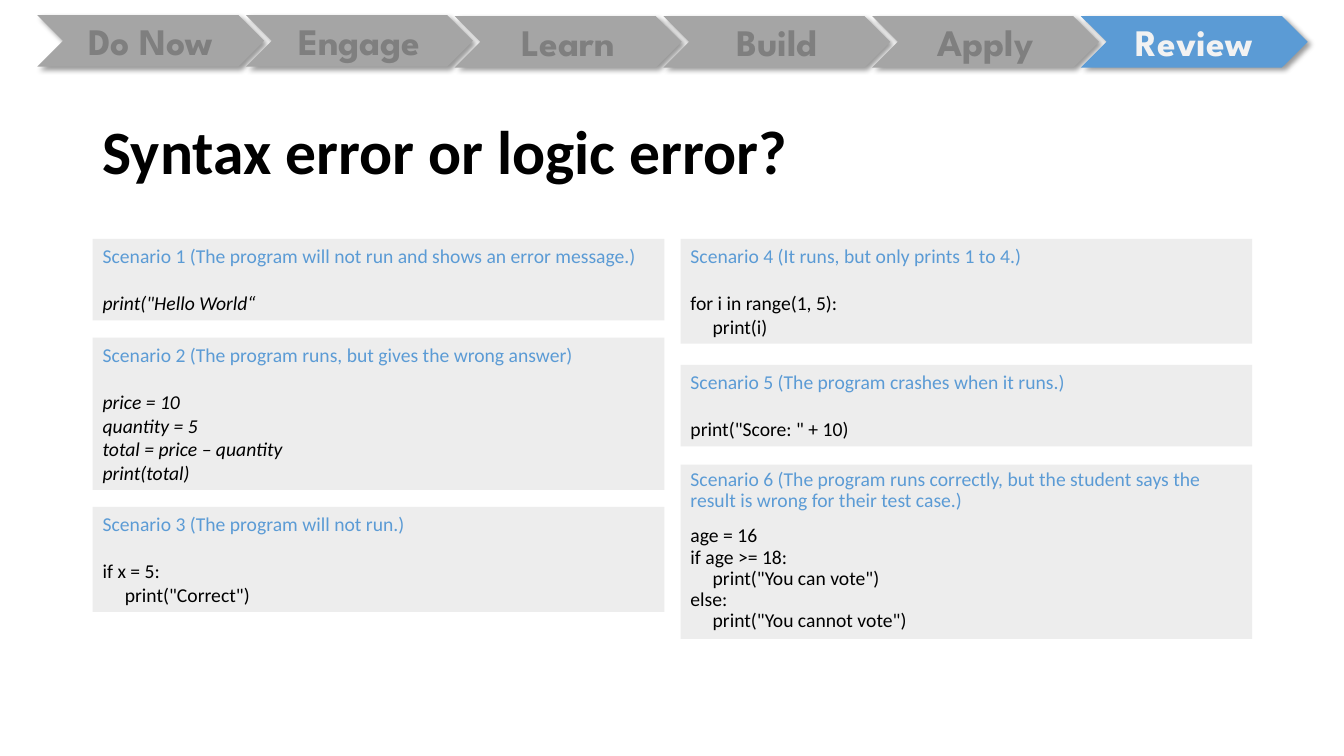
import pptx
import pptx.util
import pptx.dml.color
import pptx.enum.shapes
import pptx.enum.text
import pptx.oxml
import pptx.oxml.ns
from pptx.util import Inches

SHAPE = pptx.enum.shapes.MSO_SHAPE
ALIGN = pptx.enum.text.PP_ALIGN
ANCHOR = pptx.enum.text.MSO_ANCHOR
BLUE, GREY, PALE, BLACK = "5B9BD5", "A5A5A5", "EDEDED", "000000"

STAGES = ["Do Now", "Engage", "Learn", "Build", "Apply", "Review"]

# Each scenario: top, height, heading, code, italic code
LEFT = [
    (2.37, 0.81, "Scenario 1 (The program will not run and shows an error message.)",
     ['print("Hello World“'], True),
    (3.35, 1.51, "Scenario 2 (The program runs, but gives the wrong answer)",
     ["price = 10", "quantity = 5", "total = price – quantity", "print(total)"], True),
    (5.03, 1.04, "Scenario 3 (The program will not run.)",
     ["if x = 5:", '     print("Correct")'], False),
]
RIGHT = [
    (2.37, 1.04, "Scenario 4 (It runs, but only prints 1 to 4.)",
     ["for i in range(1, 5):", "     print(i)"], False),
    (3.62, 0.81, "Scenario 5 (The program crashes when it runs.)",
     ['print("Score: " + 10)'], False),
]
LAST = (4.61, 1.73,
        "Scenario 6 (The program runs correctly, but the student says the "
        "result is wrong for their test case.)",
        ["age = 16", "if age >= 18:", '     print("You can vote")', "else:",
         '     print("You cannot vote")'], False)


def color(code):
    return pptx.dml.color.RGBColor.from_string(code)


def style(para, size, code, face="Calibri", bold=False, italic=False):
    for run in para.runs:
        font = run.font
        font.name, font.size = face, pptx.util.Pt(size)
        font.bold, font.italic = bold, italic
        font.color.rgb = color(code)


def block(slide, kind, box, fill):
    """Add a filled shape without outline or shadow."""
    shape = slide.shapes.add_shape(kind, *map(Inches, box))
    shape.fill.solid()
    shape.fill.fore_color.rgb = color(fill)
    shape.line.fill.background()
    shape.shadow.inherit = False
    shape.text_frame.word_wrap = True
    return shape


def shade(shape):
    """Give the shape a soft shadow to the lower right."""
    effects = shape._element.spPr.find(pptx.oxml.ns.qn("a:effectLst"))
    effects.append(pptx.oxml.parse_xml(
        f'<a:outerShdw {pptx.oxml.ns.nsdecls("a")} blurRad="50800" dist="38100" '
        'dir="2700000" algn="tl" rotWithShape="0"><a:srgbClr val="000000">'
        '<a:alpha val="40000"/></a:srgbClr></a:outerShdw>'))


def stages(slide, left, top, width, height, active):
    """Draw the lesson stages as chevrons, with the active one lit."""
    step = 2.07
    for i, name in enumerate(STAGES):
        drop = 0.01 if i > 1 else 0
        lit = name == active
        box = (left + i * step, top + drop, width - step * (len(STAGES) - 1), height)
        arrow = block(slide, SHAPE.CHEVRON, box, BLUE if lit else GREY)
        shade(arrow)
        frame = arrow.text_frame
        frame.vertical_anchor = ANCHOR.MIDDLE
        frame.text = name
        para = frame.paragraphs[0]
        para.alignment = ALIGN.CENTER
        style(para, 26.7, "F2F2F2" if lit else "7F7F7F", "League Spartan", bold=True)


def title(slide, left, top, width, height, text):
    frame = slide.shapes.add_textbox(*map(Inches, (left, top, width, height))).text_frame
    frame.word_wrap = True
    frame.vertical_anchor = ANCHOR.MIDDLE
    frame.text = text
    para = frame.paragraphs[0]
    para.line_spacing = 0.9
    style(para, 44, BLACK, bold=True)


def card(slide, left, width, item, gap=17, pitch=1.0):
    """Place one scenario: a blue heading, then its code after a gap in points."""
    top, height, head, code, italic = item
    frame = block(slide, SHAPE.RECTANGLE, (left, top, width, height), PALE).text_frame
    frame.vertical_anchor = ANCHOR.TOP
    frame.text = "\n".join([head] + code)
    for i, para in enumerate(frame.paragraphs):
        para.alignment = ALIGN.LEFT
        para.line_spacing = pitch
        style(para, 14, BLACK if i else BLUE, italic=italic and i > 0)
    frame.paragraphs[1].space_before = pptx.util.Pt(gap)


def main():
    deck = pptx.Presentation()
    deck.slide_width, deck.slide_height = Inches(13.33), Inches(7.5)
    slide = deck.slides.add_slide(deck.slide_layouts[6])
    stages(slide, 0.37, 0.15, 12.6, 0.51, "Review")
    title(slide, 0.92, 0.81, 11.5, 1.45, "Syntax error or logic error?")
    for left, items in ((0.92, LEFT), (6.75, RIGHT)):
        for item in items:
            card(slide, left, 5.67, item)
    card(slide, 6.75, 5.67, LAST, gap=10, pitch=0.9)
    deck.save("out.pptx")


if __name__ == "__main__":
    main()
